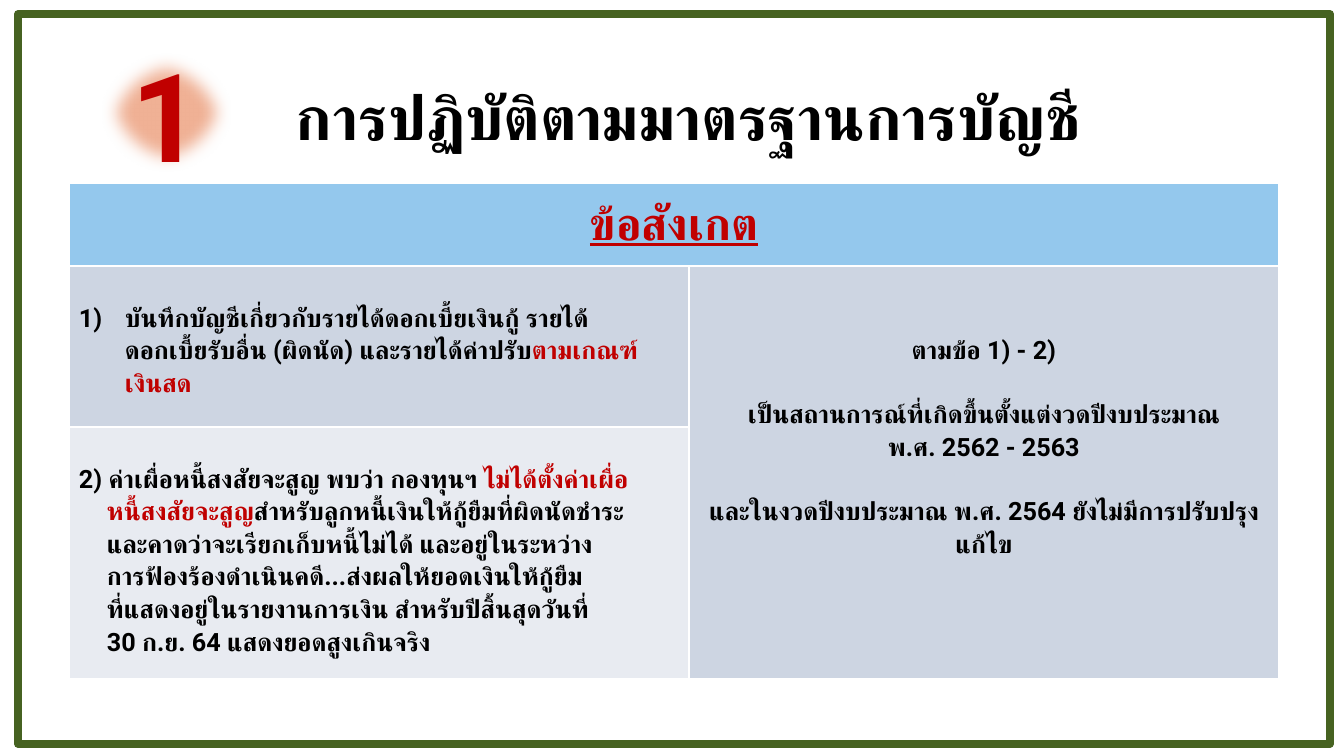
import pptx
import pptx.dml.color
import pptx.enum.shapes
import pptx.enum.text
import pptx.oxml.ns
import pptx.util
import lxml.etree

THEME = {
    "font": "Roboto",
    "black": "000000", "red": "C00000", "frame": "466221", "badge": "F0B195",
    "header": "94C8ED", "band": "CDD5E2", "light": "E8EBF1",
    "title_size": 36.7, "number_size": 73.3, "header_size": 27, "body_size": 15,
}
EMU_PER_PX = 914400 / 121
qn = pptx.oxml.ns.qn
ALIGN = pptx.enum.text.PP_ALIGN
ANCHOR = pptx.enum.text.MSO_ANCHOR
SHAPE = pptx.enum.shapes.MSO_SHAPE


def px(*lengths):
    values = [pptx.util.Emu(round(n * EMU_PER_PX)) for n in lengths]
    return values if len(values) > 1 else values[0]


def write(paragraph, parts, size, align=ALIGN.LEFT, spacing=1.0):
    """Fill a paragraph with (text, colour) parts; a newline breaks the line."""
    for text, colour in parts:
        for i, line in enumerate(text.split("\n")):
            if i:
                paragraph.add_line_break()
            run = paragraph.add_run()
            run.text = line
            run.font.color.rgb = pptx.dml.color.RGBColor.from_string(THEME[colour])
    paragraph.alignment = align
    paragraph.line_spacing = spacing
    font = paragraph.font
    font.name, font.size, font.bold = THEME["font"], pptx.util.Pt(THEME[size]), True
    # Thai text takes the complex-script typeface
    defaults = paragraph._p.pPr.find(qn("a:defRPr"))
    lxml.etree.SubElement(defaults, qn("a:cs"), typeface=THEME["font"])


deck = pptx.Presentation()
deck.slide_width, deck.slide_height = px(1344, 756)
slide = deck.slides.add_slide(deck.slide_layouts[5])

# Title
title = slide.shapes.title
title.left, title.top, title.width, title.height = px(33, 35, 1311, 125)
title.text_frame.auto_size = pptx.enum.text.MSO_AUTO_SIZE.NONE
title.text_frame.vertical_anchor = ANCHOR.BOTTOM
write(title.text_frame.paragraphs[0], [("การปฏิบัติตามมาตรฐานการบัญชี", "black")],
      "title_size", ALIGN.CENTER, 0.9)

# Frame around the slide
frame = slide.shapes.add_shape(SHAPE.RECTANGLE, *px(18, 14, 1312, 730))
frame.shadow.inherit = False
frame.fill.background()
frame.line.color.rgb = pptx.dml.color.RGBColor.from_string(THEME["frame"])
frame.line.width = pptx.util.Pt(4.5)

# Section number on a soft-edged ellipse
badge = slide.shapes.add_shape(SHAPE.OVAL, *px(98, 50, 138, 126))
badge.shadow.inherit = False
badge.fill.solid()
badge.fill.fore_color.rgb = pptx.dml.color.RGBColor.from_string(THEME["badge"])
badge.line.fill.background()
effects = badge._element.spPr.find(qn("a:effectLst"))
lxml.etree.SubElement(effects, qn("a:softEdge"), rad=str(px(17)))
badge.text_frame.vertical_anchor = ANCHOR.MIDDLE
write(badge.text_frame.paragraphs[0], [("1", "red")], "number_size", ALIGN.CENTER)

# Table of observations
table = slide.shapes.add_table(3, 2, *px(69, 183, 1210, 496)).table
table.horz_banding = False
for column, width in zip(table.columns, (620, 590)):
    column.width = px(width)
for row, height in zip(table.rows, (83, 161, 252)):
    row.height = px(height)
header, first, second, period = (
    table.cell(0, 0), table.cell(1, 0), table.cell(2, 0), table.cell(1, 1))
header.merge(table.cell(0, 1))
period.merge(table.cell(2, 1))
for cell, fill, top in ((header, "header", 15), (first, "band", 35),
                        (second, "light", 35), (period, "band", 67)):
    cell.fill.solid()
    cell.fill.fore_color.rgb = pptx.dml.color.RGBColor.from_string(THEME[fill])
    cell.margin_left = cell.margin_right = px(10)
    cell.margin_top, cell.margin_bottom = px(top, 5)

# Header
heading = header.text_frame.paragraphs[0]
write(heading, [("ข้อสังเกต", "red")], "header_size", ALIGN.CENTER)
heading.font.underline = True

# Observations with hanging indents
income = first.text_frame.paragraphs[0]
allowance = second.text_frame.paragraphs[0]
for item, indent in ((income, 46), (allowance, 28)):
    properties = item._p.get_or_add_pPr()
    properties.set("marL", str(px(indent)))
    properties.set("indent", str(px(-indent)))
lxml.etree.SubElement(income._p.pPr, qn("a:buAutoNum"), type="arabicParenR")
write(income, [
    ("บันทึกบัญชีเกี่ยวกับรายได้ดอกเบี้ยเงินกู้ รายได้\n"
     "ดอกเบี้ยรับอื่น (ผิดนัด) และรายได้ค่าปรับ", "black"),
    ("ตามเกณฑ์\nเงินสด", "red"),
], "body_size", spacing=1.1)
write(allowance, [
    ("2) ค่าเผื่อหนี้สงสัยจะสูญ พบว่า กองทุนฯ ", "black"),
    ("ไม่ได้ตั้งค่าเผื่อ\nหนี้สงสัยจะสูญ", "red"),
    ("สำหรับลูกหนี้เงินให้กู้ยืมที่ผิดนัดชำระ\n"
     "และคาดว่าจะเรียกเก็บหนี้ไม่ได้ และอยู่ในระหว่าง\n"
     "การฟ้องร้องดำเนินคดี...ส่งผลให้ยอดเงินให้กู้ยืม\n"
     "ที่แสดงอยู่ในรายงานการเงิน สำหรับปีสิ้นสุดวันที่\n"
     "30 ก.ย. 64 แสดงยอดสูงเกินจริง", "black"),
], "body_size", spacing=1.1)

# Period the observations apply to
period_lines = (
    ("ตามข้อ 1) - 2)", 0),
    ("เป็นสถานการณ์ที่เกิดขึ้นตั้งแต่งวดปีงบประมาณ", 19),
    ("พ.ศ. 2562 - 2563", 0),
    ("และในงวดปีงบประมาณ พ.ศ. 2564 ยังไม่มีการปรับปรุงแก้ไข", 19),
)
for i, (line, gap) in enumerate(period_lines):
    paragraph = period.text_frame.add_paragraph() if i else period.text_frame.paragraphs[0]
    write(paragraph, [(line, "black")], "body_size", ALIGN.CENTER, 1.1)
    if gap:
        paragraph.space_before = pptx.util.Pt(gap)

deck.save("out.pptx")
